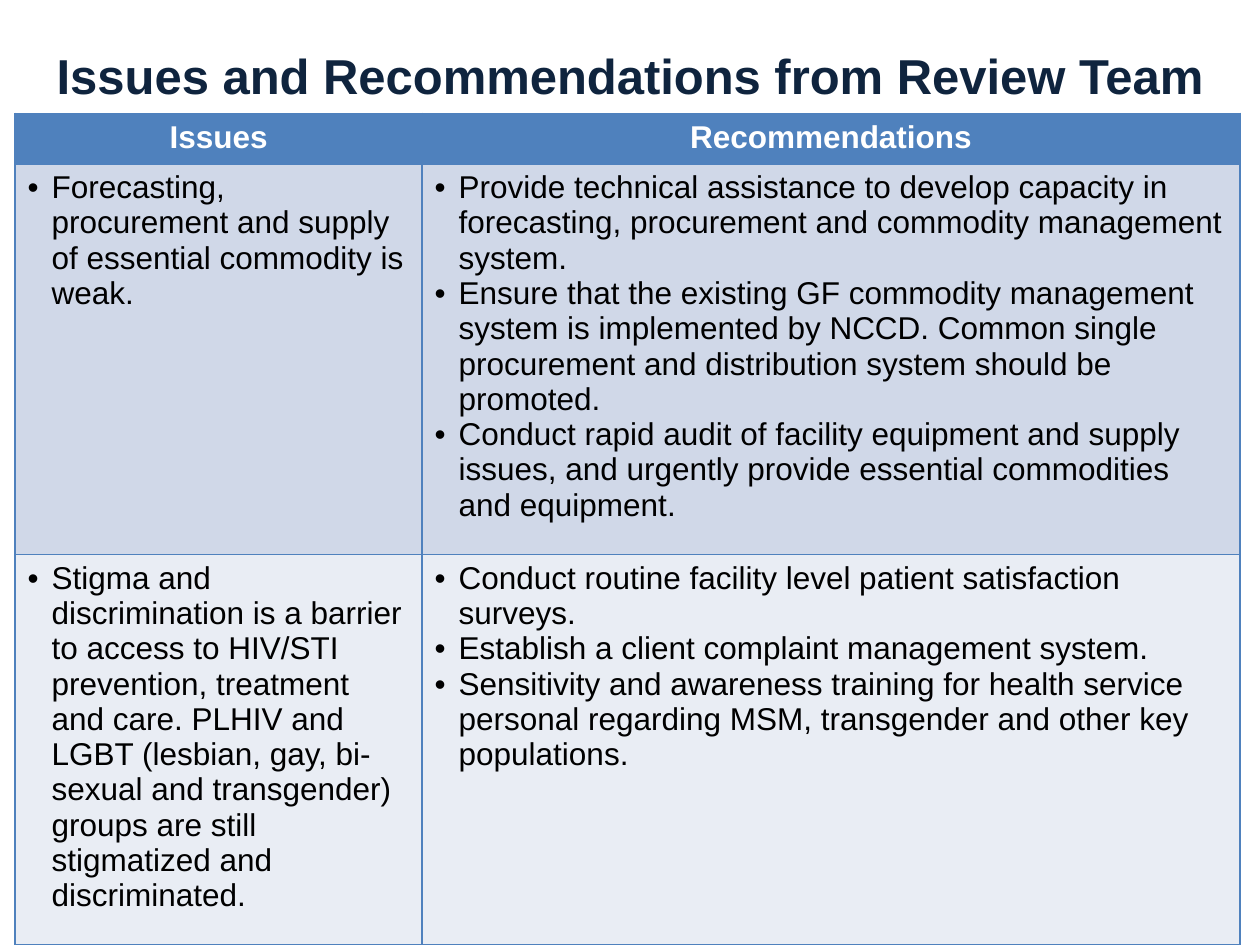
from lxml import etree
from pptx import Presentation
from pptx.dml.color import RGBColor
from pptx.enum.text import MSO_ANCHOR, PP_ALIGN
from pptx.oxml.ns import qn
from pptx.util import Inches, Pt

NAVY = RGBColor(0x0F, 0x24, 0x3E)
BLUE = RGBColor(0x4F, 0x81, 0xBD)
WHITE = RGBColor(0xFF, 0xFF, 0xFF)
BLACK = RGBColor(0, 0, 0)
BAND_DARK = RGBColor(0xD0, 0xD8, 0xE8)
BAND_LIGHT = RGBColor(0xE9, 0xED, 0xF4)

HEADINGS = ["Issues", "Recommendations"]
# Each row: fill, then the bullets of the two cells
ROWS = [
    (BAND_DARK,
     ["Forecasting, procurement and supply of essential commodity is weak."],
     ["Provide technical assistance to develop capacity in forecasting, procurement "
      "and commodity management system.",
      "Ensure that the existing GF commodity management system is implemented by NCCD. "
      "Common single procurement and distribution system should be promoted.",
      "Conduct rapid audit of facility equipment and supply issues, and urgently provide "
      "essential commodities and equipment."]),
    (BAND_LIGHT,
     ["Stigma and discrimination is a barrier to access to HIV/STI prevention, treatment "
      "and care. PLHIV and LGBT (lesbian, gay, bi-sexual and transgender) groups are still "
      "stigmatized and discriminated."],
     ["Conduct routine facility level patient satisfaction surveys.",
      "Establish a client complaint management system.",
      "Sensitivity and awareness training for health service personal regarding MSM, "
      "transgender and other key populations."]),
]


def format_text(para, size, color, bold):
    for span in para.runs:
        span.font.name = "Arial"
        span.font.size = Pt(size)
        span.font.bold = bold
        span.font.color.rgb = color


def style_cell(cell, color):
    """Fill the cell and draw its four borders."""
    cell.fill.solid()
    cell.fill.fore_color.rgb = color
    properties = cell._tc.get_or_add_tcPr()
    for index, side in enumerate(["lnL", "lnR", "lnT", "lnB"]):
        line = etree.Element(qn(f"a:{side}"), w=str(Pt(1)))
        fill = etree.SubElement(line, qn("a:solidFill"))
        etree.SubElement(fill, qn("a:srgbClr"), val=str(BLUE))
        properties.insert(index, line)


deck = Presentation()
deck.slide_width, deck.slide_height = Inches(10), Inches(7.5)
page = deck.slides.add_slide(deck.slide_layouts[6])

# Title
box = page.shapes.add_textbox(Inches(0), Inches(-0.03), Inches(10), Inches(1.25))
box.fill.solid()
box.fill.fore_color.rgb = WHITE
frame = box.text_frame
frame.word_wrap = True
frame.vertical_anchor = MSO_ANCHOR.MIDDLE
frame.text = "Issues and Recommendations from Review Team"
frame.paragraphs[0].alignment = PP_ALIGN.CENTER
format_text(frame.paragraphs[0], 28, NAVY, True)

# Table
table = page.shapes.add_table(3, 2, Inches(0.12), Inches(0.9),
                              Inches(9.72), Inches(6.19)).table
for column, width in zip(table.columns, [3.23, 6.49]):
    column.width = Inches(width)
for row, height in zip(table.rows, [0.39, 2.9, 2.9]):
    row.height = Inches(height)

# Heading row
for cell, heading in zip(table.rows[0].cells, HEADINGS):
    style_cell(cell, BLUE)
    cell.text_frame.text = heading
    para = cell.text_frame.paragraphs[0]
    para.alignment = PP_ALIGN.CENTER
    format_text(para, 18, WHITE, True)

# Bulleted rows
for row_index, (band, *columns) in enumerate(ROWS, start=1):
    for column_index, bullets in enumerate(columns):
        cell = table.cell(row_index, column_index)
        style_cell(cell, band)
        cell.text_frame.text = "\n".join(bullets)
        for para in cell.text_frame.paragraphs:
            format_text(para, 18, BLACK, False)
            settings = para._p.get_or_add_pPr()
            settings.set("marL", str(Inches(0.19)))
            settings.set("indent", str(Inches(-0.19)))
            etree.SubElement(settings, qn("a:buFont"), typeface="Arial")
            etree.SubElement(settings, qn("a:buChar"), char="•")

deck.save("out.pptx")
